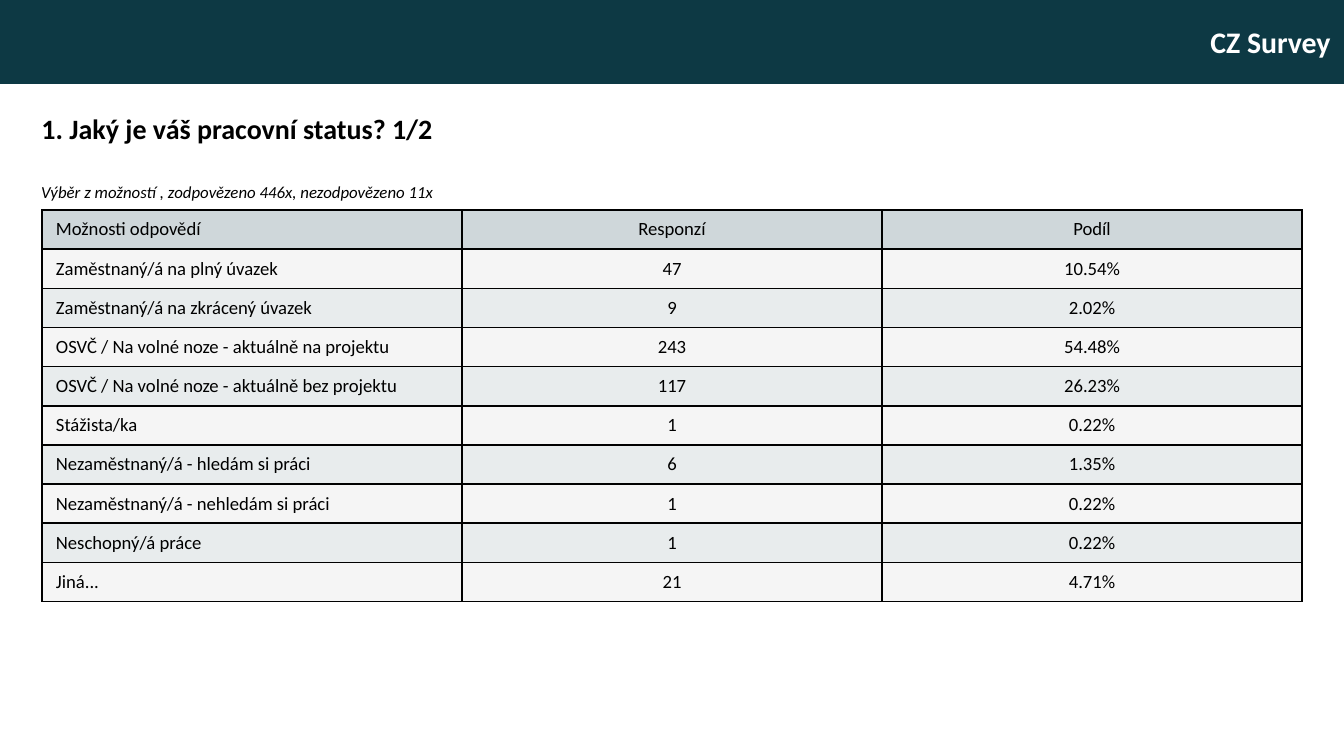
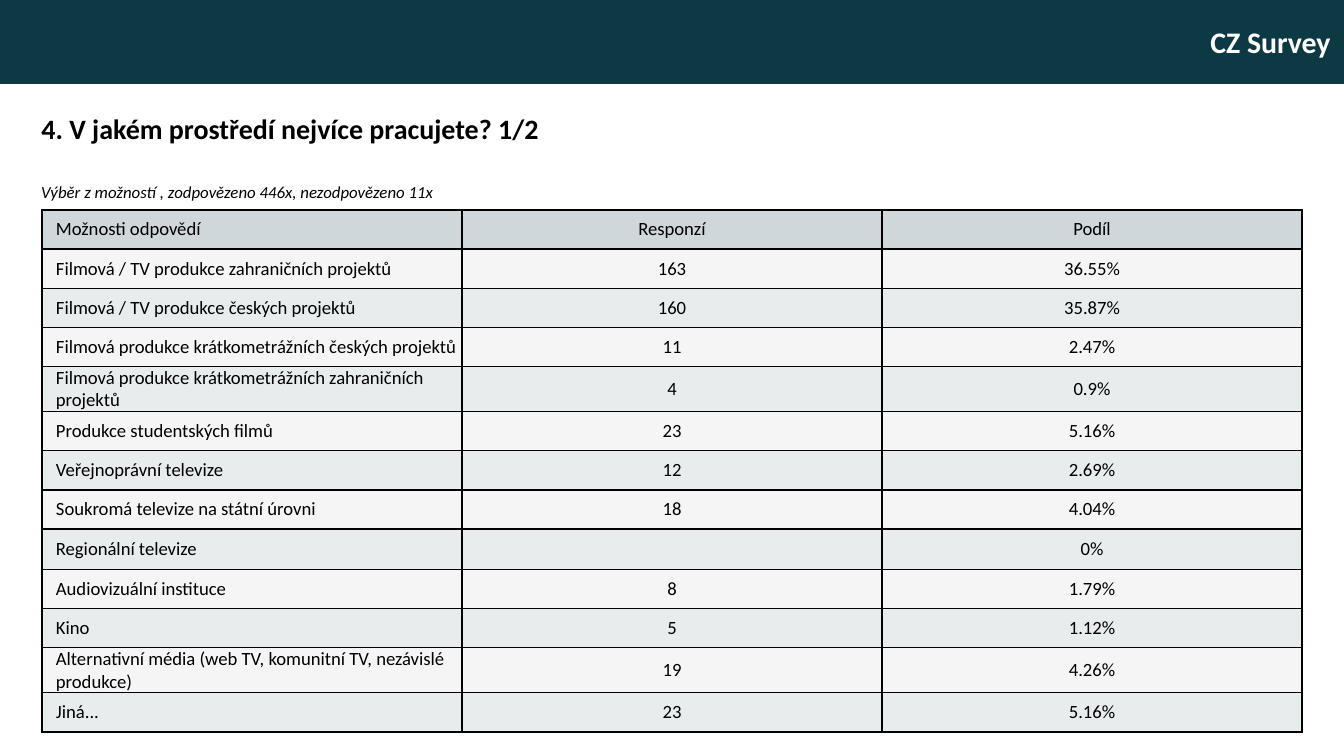
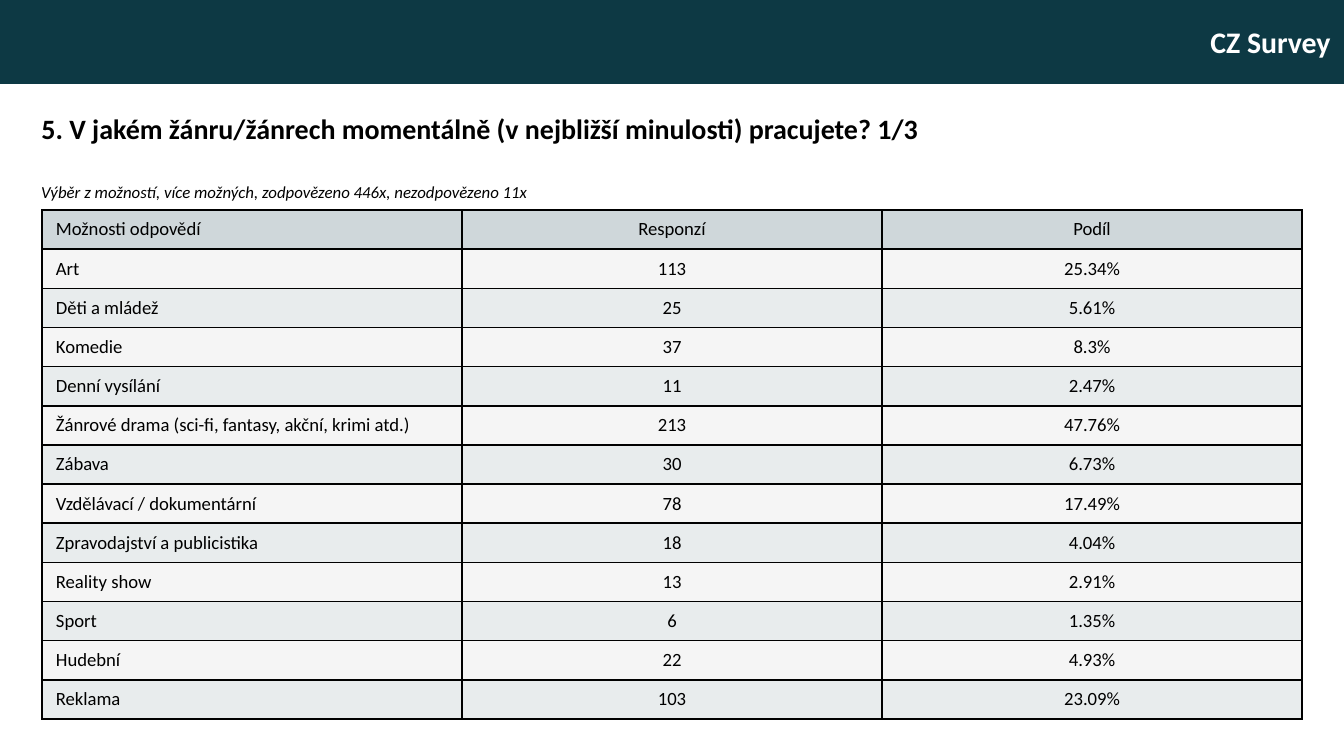
from lxml.etree import SubElement
from pptx import Presentation
from pptx.dml.color import RGBColor
from pptx.enum.shapes import MSO_SHAPE
from pptx.enum.text import MSO_ANCHOR, MSO_AUTO_SIZE, PP_ALIGN
from pptx.oxml.ns import qn
from pptx.util import Inches, Pt

FONT = "Calibri"
COLORS = {
    "band": "0D3944",
    "band_text": "FFFFFF",
    "text": "000000",
    "border": "000000",
    "header_row": "CFD7DA",
    "odd_row": "F5F5F5",
    "even_row": "E8ECED",
}
GRID_COLUMNS, GRID_ROWS = 960, 540
MARGIN = 30
TEXT_INSET = 10
BAND_HEIGHT = 60
TITLE_TOP, TITLE_HEIGHT = 75, 50
SUMMARY_TOP, SUMMARY_WIDTH, SUMMARY_HEIGHT = 125, 400, 60
TABLE_TOP, ROW_HEIGHT, CELL_INDENT = 150, 28, 5

BAND_LABEL = "CZ Survey"
HEADINGS = ("Možnosti odpovědí", "Responzí", "Podíl")
SINGLE_CHOICE = "Výběr z možností , zodpovězeno 446x, nezodpovězeno 11x"
MULTIPLE_CHOICE = "Výběr z možností, více možných, zodpovězeno 446x, nezodpovězeno 11x"

QUESTIONS = [
    ("1. Jaký je váš pracovní status? 1/2", SINGLE_CHOICE, [
        ("Zaměstnaný/á na plný úvazek", "47", "10.54%"),
        ("Zaměstnaný/á na zkrácený úvazek", "9", "2.02%"),
        ("OSVČ / Na volné noze - aktuálně na projektu", "243", "54.48%"),
        ("OSVČ / Na volné noze - aktuálně bez projektu", "117", "26.23%"),
        ("Stážista/ka", "1", "0.22%"),
        ("Nezaměstnaný/á - hledám si práci", "6", "1.35%"),
        ("Nezaměstnaný/á - nehledám si práci", "1", "0.22%"),
        ("Neschopný/á práce", "1", "0.22%"),
        ("Jiná...", "21", "4.71%"),
    ]),
    ("4. V jakém prostředí nejvíce pracujete? 1/2", SINGLE_CHOICE, [
        ("Filmová / TV produkce zahraničních projektů", "163", "36.55%"),
        ("Filmová / TV produkce českých projektů", "160", "35.87%"),
        ("Filmová produkce krátkometrážních českých projektů", "11", "2.47%"),
        ("Filmová produkce krátkometrážních zahraničních projektů", "4", "0.9%"),
        ("Produkce studentských filmů", "23", "5.16%"),
        ("Veřejnoprávní televize", "12", "2.69%"),
        ("Soukromá televize na státní úrovni", "18", "4.04%"),
        ("Regionální televize", "", "0%"),
        ("Audiovizuální instituce", "8", "1.79%"),
        ("Kino", "5", "1.12%"),
        ("Alternativní média (web TV, komunitní TV, nezávislé produkce)", "19", "4.26%"),
        ("Jiná...", "23", "5.16%"),
    ]),
    ("5. V jakém žánru/žánrech momentálně (v nejbližší minulosti) pracujete? 1/3",
     MULTIPLE_CHOICE, [
        ("Art", "113", "25.34%"),
        ("Děti a mládež", "25", "5.61%"),
        ("Komedie", "37", "8.3%"),
        ("Denní vysílání", "11", "2.47%"),
        ("Žánrové drama (sci-fi, fantasy, akční, krimi atd.)", "213", "47.76%"),
        ("Zábava", "30", "6.73%"),
        ("Vzdělávací / dokumentární", "78", "17.49%"),
        ("Zpravodajství a publicistika", "18", "4.04%"),
        ("Reality show", "13", "2.91%"),
        ("Sport", "6", "1.35%"),
        ("Hudební", "22", "4.93%"),
        ("Reklama", "103", "23.09%"),
    ]),
]


def grid(units):
    """Convert grid units, 96 to the inch, to a length."""
    return Inches(units / 96)


def color(key):
    """Look up a shared colour."""
    return RGBColor.from_string(COLORS[key])


def write(frame, text, size, align=PP_ALIGN.LEFT, ink="text", bold=False, italic=False):
    """Set one paragraph of text and format its runs."""
    frame.text = text
    paragraph = frame.paragraphs[0]
    paragraph.alignment = align
    for run in paragraph.runs:
        run.font.name = FONT
        run.font.size = Pt(size)
        run.font.bold = bold
        run.font.italic = italic
        run.font.color.rgb = color(ink)
    return paragraph


def add_band(slide):
    """Draw the labelled band and hand it to the layout that the slides share."""
    band = slide.shapes.add_shape(
        MSO_SHAPE.RECTANGLE, 0, 0, grid(GRID_COLUMNS), grid(BAND_HEIGHT))
    band.shadow.inherit = False
    band.fill.solid()
    band.fill.fore_color.rgb = color("band")
    band.line.fill.background()
    band.text_frame.vertical_anchor = MSO_ANCHOR.MIDDLE
    write(band.text_frame, BAND_LABEL, 16, PP_ALIGN.RIGHT, "band_text", bold=True)
    slide.slide_layout.shapes.element.append(band.element)


def set_title(slide, question):
    """Place the question in the title placeholder."""
    title = slide.shapes.title
    left = MARGIN - TEXT_INSET
    title.left, title.top = grid(left), grid(TITLE_TOP)
    title.width, title.height = grid(GRID_COLUMNS - 2 * left), grid(TITLE_HEIGHT)
    title.text_frame.auto_size = MSO_AUTO_SIZE.NONE
    title.text_frame.vertical_anchor = MSO_ANCHOR.TOP
    write(title.text_frame, question, 15, bold=True)


def add_summary(slide, summary):
    """Add the italic line on the kind of choice and the response counts."""
    box = slide.shapes.add_textbox(
        grid(MARGIN - TEXT_INSET), grid(SUMMARY_TOP),
        grid(SUMMARY_WIDTH), grid(SUMMARY_HEIGHT))
    box.text_frame.word_wrap = True
    write(box.text_frame, summary, 9, italic=True)


def add_borders(cell):
    """Outline a cell on all four sides."""
    properties = cell._tc.get_or_add_tcPr()
    for side in ("a:lnL", "a:lnR", "a:lnT", "a:lnB"):
        line = SubElement(properties, qn(side), w=str(Pt(1)))
        fill = SubElement(line, qn("a:solidFill"))
        SubElement(fill, qn("a:srgbClr"), val=COLORS["border"])


def fill_cell(cell, text, row_color, is_option):
    """Format one cell; options sit left and figures are centred."""
    add_borders(cell)
    cell.fill.solid()
    cell.fill.fore_color.rgb = color(row_color)
    cell.vertical_anchor = MSO_ANCHOR.MIDDLE
    cell.margin_left = grid(CELL_INDENT) if is_option else 0
    cell.margin_right = cell.margin_top = cell.margin_bottom = 0
    align = PP_ALIGN.LEFT if is_option else PP_ALIGN.CENTER
    paragraph = write(cell.text_frame, text, 10, align)
    if is_option:
        paragraph._p.get_or_add_pPr().set("marL", str(grid(CELL_INDENT)))


def add_answers(slide, answers):
    """Add the table of answers with alternating row colours."""
    rows = [HEADINGS, *answers]
    table = slide.shapes.add_table(
        len(rows), len(HEADINGS), grid(MARGIN), grid(TABLE_TOP),
        grid(GRID_COLUMNS - 2 * MARGIN), grid(ROW_HEIGHT * len(rows))).table
    table.first_row = table.horz_banding = False
    for row_number, row in enumerate(rows):
        stripe = "odd_row" if row_number % 2 else "even_row"
        row_color = stripe if row_number else "header_row"
        for column, text in enumerate(row):
            fill_cell(table.cell(row_number, column), text, row_color, column == 0)


def main():
    """Build one slide for each survey question."""
    deck = Presentation()
    deck.slide_width, deck.slide_height = grid(GRID_COLUMNS), grid(GRID_ROWS)
    title_only = deck.slide_layouts[5]
    for number, (question, summary, answers) in enumerate(QUESTIONS):
        slide = deck.slides.add_slide(title_only)
        if number == 0:
            add_band(slide)
        set_title(slide, question)
        add_summary(slide, summary)
        add_answers(slide, answers)
    deck.save("out.pptx")


if __name__ == "__main__":
    main()
